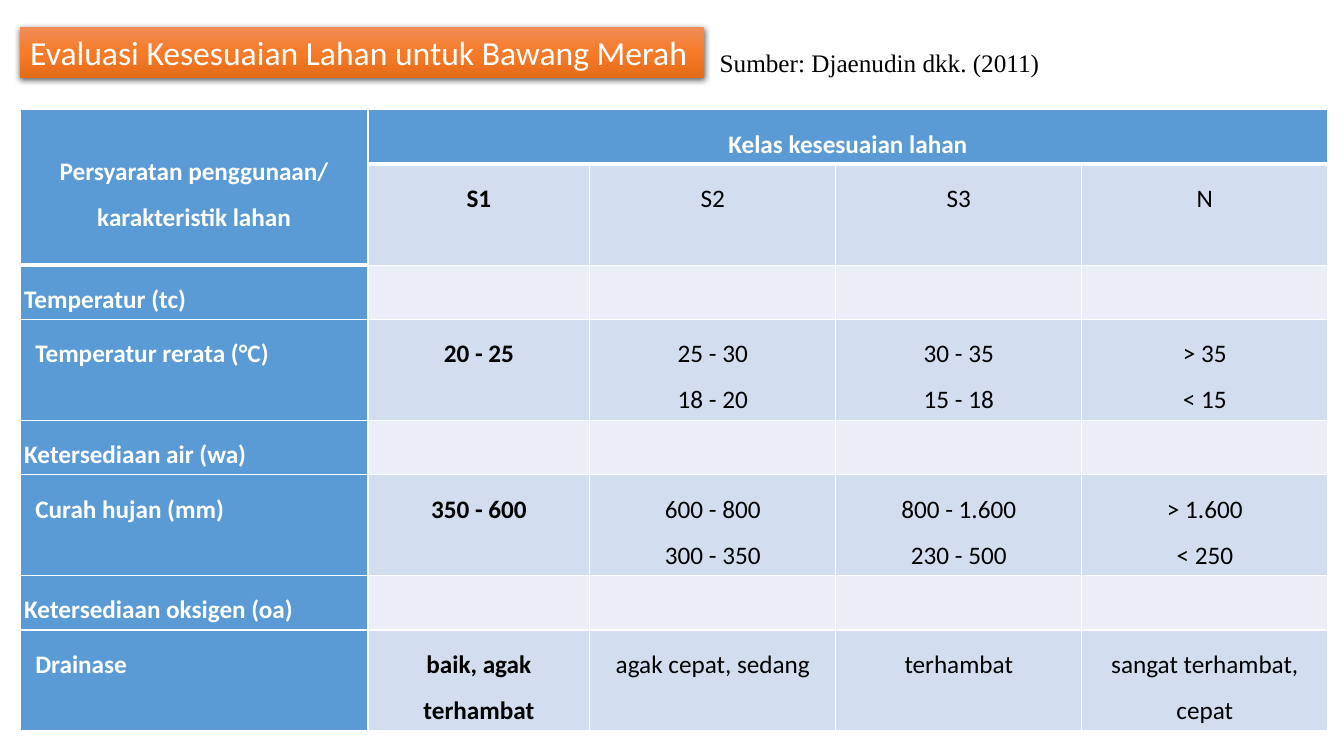
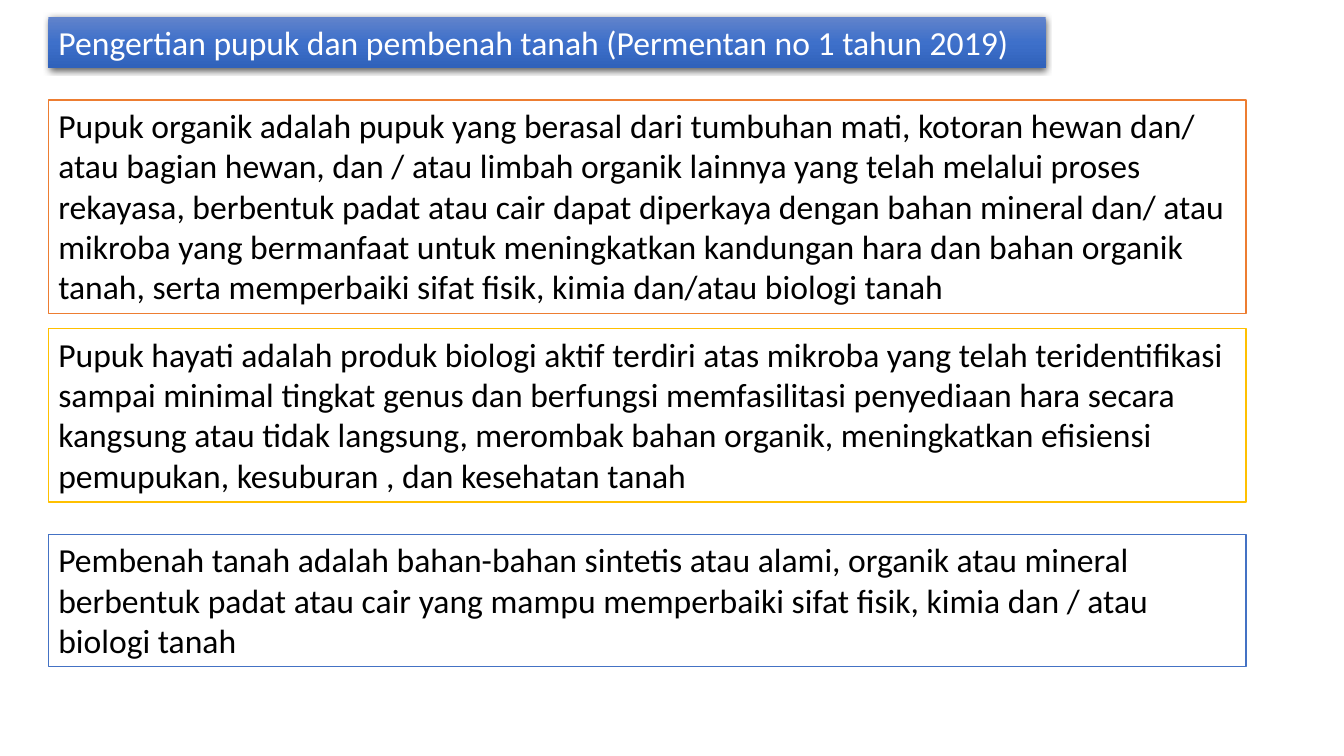
from lxml import etree
from pptx import Presentation
from pptx.dml.color import RGBColor
from pptx.enum.shapes import MSO_SHAPE
from pptx.enum.text import MSO_ANCHOR as Anchor, MSO_AUTO_SIZE as AutoSize, PP_ALIGN as Align
from pptx.oxml import parse_xml
from pptx.oxml.ns import nsdecls, qn
from pptx.util import Inches, Pt

# Palette
WHITE = RGBColor(0xFF, 0xFF, 0xFF)
BLACK = RGBColor(0x00, 0x00, 0x00)
ORANGE = RGBColor(0xED, 0x7D, 0x31)
GOLD = RGBColor(0xFF, 0xC0, 0x00)
BLUE = RGBColor(0x44, 0x72, 0xC4)
HEADER = RGBColor(0x5B, 0x9B, 0xD5)
BAND_DARK = RGBColor(0xD2, 0xDE, 0xEF)
BAND_LIGHT = RGBColor(0xEA, 0xEF, 0xF7)
ORANGE_GRADIENT = (RGBColor(0xF1, 0x8C, 0x57), RGBColor(0xF6, 0x7B, 0x28), RGBColor(0xE5, 0x6C, 0x19))
BLUE_GRADIENT = (RGBColor(0x61, 0x83, 0xCB), RGBColor(0x3E, 0x70, 0xCA), RGBColor(0x30, 0x62, 0xBB))

TITLE_ONLY = 5

# Slide 1: table content, one tuple per row
COLUMN_WIDTHS = (3.45, 2.2, 2.44, 2.44, 2.44)
SUITABILITY = (
    ("Persyaratan penggunaan/\nkarakteristik lahan", "Kelas kesesuaian lahan", "", "", ""),
    ("", "S1", "S2", "S3", "N"),
    ("Temperatur (tc)", "", "", "", ""),
    ("Temperatur rerata (°C)", "20 - 25", "25 - 30\n18 - 20", "30 - 35\n15 - 18", "> 35\n< 15"),
    ("Ketersediaan air (wa)", "", "", "", ""),
    ("Curah hujan (mm)", "350 - 600", "600 - 800\n300 - 350", "800 - 1.600\n230 - 500", "> 1.600\n< 250"),
    ("Ketersediaan oksigen (oa)", "", "", "", ""),
    ("Drainase", "baik, agak terhambat", "agak cepat, sedang", "terhambat", "sangat terhambat, cepat"),
)

# Slide 2: top, height, outline and text of each definition
DEFINITIONS = (
    (0.99, 2.12, ORANGE,
     "Pupuk organik adalah pupuk yang berasal dari tumbuhan mati, kotoran hewan dan/ atau bagian "
     "hewan, dan / atau limbah organik lainnya yang telah melalui proses rekayasa, berbentuk padat "
     "atau cair dapat diperkaya dengan bahan mineral dan/ atau mikroba yang bermanfaat untuk "
     "meningkatkan kandungan hara dan bahan organik tanah, serta memperbaiki sifat fisik, kimia "
     "dan/atau biologi tanah"),
    (3.26, 1.72, GOLD,
     "Pupuk hayati adalah produk biologi aktif terdiri atas mikroba yang telah teridentifikasi "
     "sampai minimal tingkat genus dan berfungsi memfasilitasi penyediaan hara secara kangsung "
     "atau tidak langsung, merombak bahan organik, meningkatkan efisiensi pemupukan, kesuburan , "
     "dan kesehatan tanah"),
    (5.3, 1.31, BLUE,
     "Pembenah tanah adalah bahan-bahan sintetis atau alami, organik atau mineral berbentuk padat "
     "atau cair yang mampu memperbaiki sifat fisik, kimia dan / atau biologi tanah"),
)


class SlideBuilder:
    """Holds the shared style and the current slide."""

    font = "Calibri"
    large, small = Pt(24), Pt(18)

    def __init__(self, deck):
        self.deck = deck
        self.slide = None

    def new_slide(self):
        self.slide = self.deck.slides.add_slide(self.deck.slide_layouts[TITLE_ONLY])

    def fill_text(self, frame, text, size, color, align=Align.LEFT, bold=False, font=None, spacing=1.0):
        para = frame.paragraphs[0]
        para.text = text
        para.alignment = align
        para.line_spacing = spacing
        for span in para.runs:
            span.font.name = font or self.font
            span.font.size = size
            span.font.bold = bold
            span.font.color.rgb = color

    def title(self, text, left, top, width, gradient):
        banner = self.slide.shapes.title
        banner.left, banner.top = Inches(left), Inches(top)
        banner.width, banner.height = Inches(width), Inches(0.5)
        frame = banner.text_frame
        frame.word_wrap = True
        frame.auto_size = AutoSize.NONE
        frame.vertical_anchor = Anchor.TOP
        self.fill_text(frame, text, self.large, WHITE)
        # Three-stop vertical gradient and soft shadow
        stops = "".join(
            f'<a:gs pos="{index * 50000}"><a:srgbClr val="{color}"/></a:gs>'
            for index, color in enumerate(gradient))
        properties = banner.element.spPr
        properties.append(parse_xml(
            f'<a:gradFill {nsdecls("a")} rotWithShape="1"><a:gsLst>{stops}</a:gsLst>'
            '<a:lin ang="5400000" scaled="0"/></a:gradFill>'))
        properties.append(parse_xml(
            f'<a:effectLst {nsdecls("a")}><a:outerShdw blurRad="57150" dist="19050" dir="5400000" '
            'algn="ctr" rotWithShape="0"><a:srgbClr val="000000"><a:alpha val="63000"/></a:srgbClr>'
            '</a:outerShdw></a:effectLst>'))

    def source(self, text, left, top, width, height):
        box = self.slide.shapes.add_textbox(Inches(left), Inches(top), Inches(width), Inches(height))
        box.text_frame.word_wrap = True
        self.fill_text(box.text_frame, text, self.small, BLACK, Align.JUSTIFY,
                       font="Times New Roman", spacing=1.5)

    def definition(self, top, height, outline, text):
        box = self.slide.shapes.add_shape(
            MSO_SHAPE.RECTANGLE, Inches(0.48), Inches(top), Inches(11.88), Inches(height))
        box.shadow.inherit = False
        box.fill.solid()
        box.fill.fore_color.rgb = WHITE
        box.line.color.rgb = outline
        box.line.width = Pt(1)
        frame = box.text_frame
        frame.word_wrap = True
        frame.vertical_anchor = Anchor.TOP
        self.fill_text(frame, text, self.large, BLACK)

    def borders(self, cell, top, bottom):
        properties = cell._tc.get_or_add_tcPr()
        for side, points in (("L", 1), ("R", 1), ("T", top), ("B", bottom)):
            line = etree.SubElement(properties, qn(f"a:ln{side}"), w=str(Pt(points)))
            line.append(parse_xml(
                f'<a:solidFill {nsdecls("a")}><a:srgbClr val="{WHITE}"/></a:solidFill>'))

    def table(self, rows, widths, left, top):
        heights = [0.54 if index % 2 == 0 else 1 for index in range(len(rows))]
        grid = self.slide.shapes.add_table(
            len(rows), len(widths), Inches(left), Inches(top),
            Inches(sum(widths)), Inches(sum(heights))).table
        for column, width in zip(grid.columns, widths):
            column.width = Inches(width)
        for index, (values, height) in enumerate(zip(rows, heights)):
            grid.rows[index].height = Inches(height)
            for column, text in enumerate(values):
                self.cell(grid.cell(index, column), text, index, column)
        # Header spans
        grid.cell(0, 0).merge(grid.cell(1, 0))
        grid.cell(0, 1).merge(grid.cell(0, len(widths) - 1))

    def cell(self, cell, text, row, column):
        header_rows = 2 if column == 0 else 1
        is_header = row < header_rows
        is_label = column == 0 and not is_header
        is_blue = is_header or is_label
        self.borders(cell, 3 if row == header_rows else 1, 3 if is_header else 1)
        cell.fill.solid()
        cell.fill.fore_color.rgb = HEADER if is_blue else BAND_DARK if row % 2 else BAND_LIGHT
        cell.margin_left = cell.margin_right = cell.margin_top = cell.margin_bottom = Inches(0.04)
        if is_label and row % 2:
            cell.margin_left = Inches(0.15)
        cell.vertical_anchor = Anchor.MIDDLE if is_header else Anchor.TOP
        if text:
            self.fill_text(cell.text_frame, text, self.small, WHITE if is_blue else BLACK,
                           Align.LEFT if is_label else Align.CENTER,
                           bold=is_blue or column == 1, spacing=1.5)


def main():
    deck = Presentation()
    deck.slide_width, deck.slide_height = Inches(13.33), Inches(7.5)
    builder = SlideBuilder(deck)

    # Land suitability table
    builder.new_slide()
    builder.title("Evaluasi Kesesuaian Lahan untuk Bawang Merah", 0.2, 0.27, 6.78, ORANGE_GRADIENT)
    builder.source("Sumber: Djaenudin dkk. (2011)", 7.04, 0.27, 3.4, 0.56)
    builder.table(SUITABILITY, COLUMN_WIDTHS, 0.2, 1.09)

    # Definitions of fertilisers and soil conditioners
    builder.new_slide()
    builder.title("Pengertian pupuk dan pembenah tanah (Permentan no 1 tahun 2019)",
                  0.48, 0.17, 9.89, BLUE_GRADIENT)
    for definition in DEFINITIONS:
        builder.definition(*definition)

    deck.save("out.pptx")


if __name__ == "__main__":
    main()
